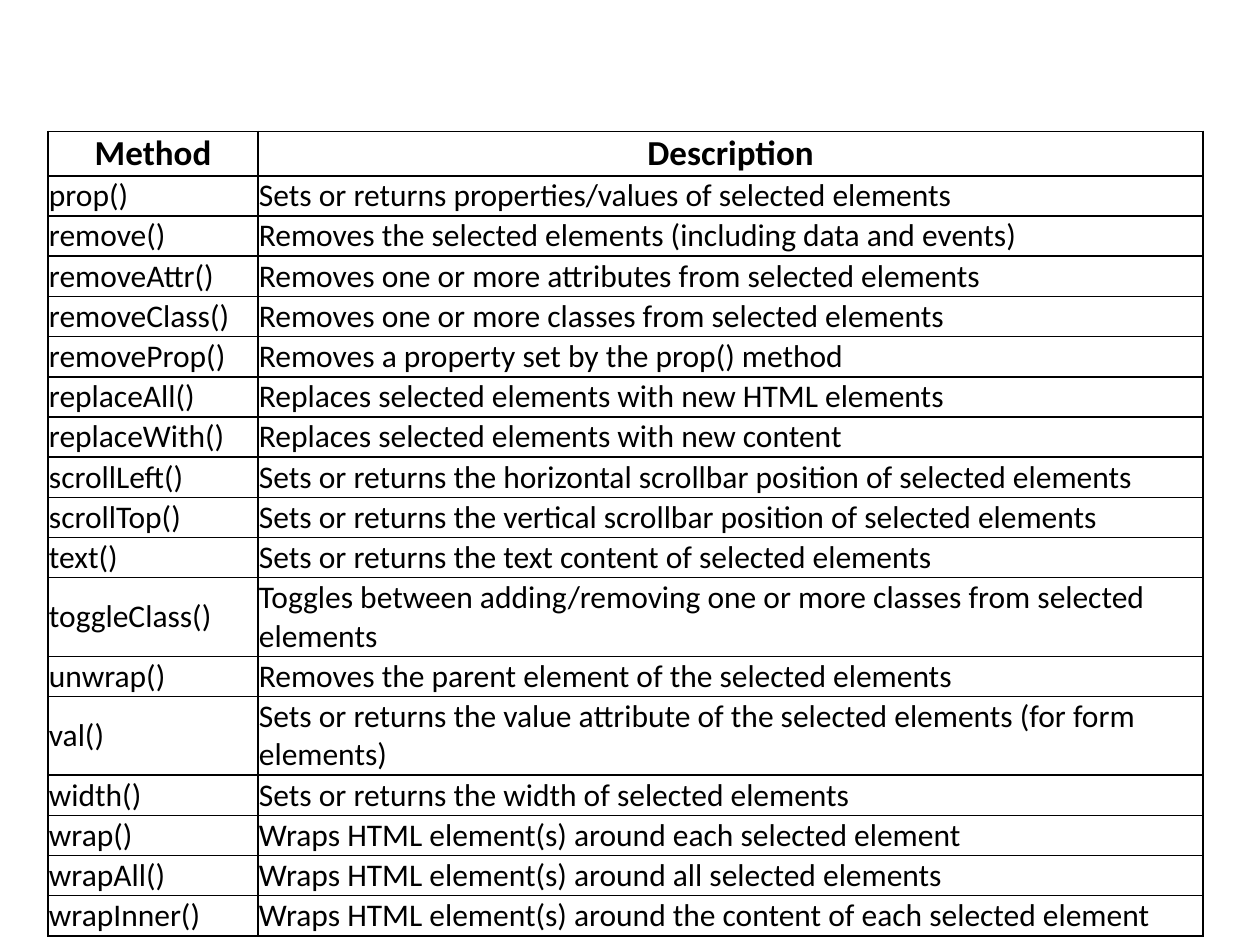
import pptx
import pptx.util
import pptx.dml.color
import pptx.enum.text
import pptx.oxml
import pptx.oxml.ns
from lxml import etree

Pt = pptx.util.Pt
ALIGN = pptx.enum.text.PP_ALIGN
BLACK, WHITE = "000000", "FFFFFF"

HEADER = ("Method", "Description")
METHODS = [
    ("prop()", "Sets or returns properties/values of selected elements"),
    ("remove()", "Removes the selected elements (including data and events)"),
    ("removeAttr()", "Removes one or more attributes from selected elements"),
    ("removeClass()", "Removes one or more classes from selected elements"),
    ("removeProp()", "Removes a property set by the prop() method"),
    ("replaceAll()", "Replaces selected elements with new HTML elements"),
    ("replaceWith()", "Replaces selected elements with new content"),
    ("scrollLeft()", "Sets or returns the horizontal scrollbar position of selected elements"),
    ("scrollTop()", "Sets or returns the vertical scrollbar position of selected elements"),
    ("text()", "Sets or returns the text content of selected elements"),
    ("toggleClass()", "Toggles between adding/removing one or more classes from selected elements"),
    ("unwrap()", "Removes the parent element of the selected elements"),
    ("val()", "Sets or returns the value attribute of the selected elements (for form elements)"),
    ("width()", "Sets or returns the width of selected elements"),
    ("wrap()", "Wraps HTML element(s) around each selected element"),
    ("wrapAll()", "Wraps HTML element(s) around all selected elements"),
    ("wrapInner()", "Wraps HTML element(s) around the content of each selected element"),
]
TWO_LINE_METHODS = {"toggleClass()", "val()"}


def color(hex_string):
    return pptx.dml.color.RGBColor.from_string(hex_string)


def write_text(frame, text, size=18, bold=False, align=ALIGN.LEFT, ink=BLACK):
    paragraph = frame.paragraphs[0]
    paragraph.alignment = align
    run = paragraph.add_run()
    run.text = text
    run.font.name = "Calibri"
    run.font.size = Pt(size)
    run.font.bold = bold
    run.font.color.rgb = color(ink)


def add_borders(cell, ink=BLACK, weight=1):
    properties = cell._tc.get_or_add_tcPr()
    # Border lines come before the fill in the cell properties
    for position, side in enumerate(("lnL", "lnR", "lnT", "lnB")):
        line = etree.fromstring(
            f'<a:{side} {pptx.oxml.ns.nsdecls("a")} w="{Pt(weight)}">'
            f'<a:solidFill><a:srgbClr val="{ink}"/></a:solidFill>'
            f'<a:prstDash val="solid"/></a:{side}>',
            pptx.oxml.oxml_parser)
        properties.insert(position, line)


def format_cell(cell, inset=0.5):
    cell.margin_left = cell.margin_right = Pt(inset)
    cell.margin_top = cell.margin_bottom = Pt(inset)
    cell.vertical_anchor = pptx.enum.text.MSO_ANCHOR.MIDDLE
    cell.fill.solid()
    cell.fill.fore_color.rgb = color(WHITE)
    add_borders(cell)


def row_height(method):
    if method == HEADER[0]:
        return 25
    return 44 if method in TWO_LINE_METHODS else 22.5


def add_method_table(slide, left, top, width):
    entries = [HEADER] + METHODS
    heights = [row_height(method) for method, _ in entries]
    table = slide.shapes.add_table(
        len(entries), len(HEADER), Pt(left), Pt(top), Pt(width), Pt(sum(heights))).table

    # Column widths: a narrow method name, the rest for its description
    method_width = 120
    table.columns[0].width = Pt(method_width)
    table.columns[1].width = Pt(width - method_width)

    # Header and method rows
    for index, (entry, height) in enumerate(zip(entries, heights)):
        table.rows[index].height = Pt(height)
        header_format = {"size": 20, "bold": True, "align": ALIGN.CENTER}
        text_format = header_format if index == 0 else {}
        for cell, text in zip(table.rows[index].cells, entry):
            format_cell(cell)
            write_text(cell.text_frame, text, **text_format)


def main():
    presentation = pptx.Presentation()
    presentation.slide_width, presentation.slide_height = Pt(720), Pt(540)
    slide = presentation.slides.add_slide(presentation.slide_layouts[6])
    add_method_table(slide, left=27.5, top=75, width=660)
    presentation.save("out.pptx")


if __name__ == "__main__":
    main()
